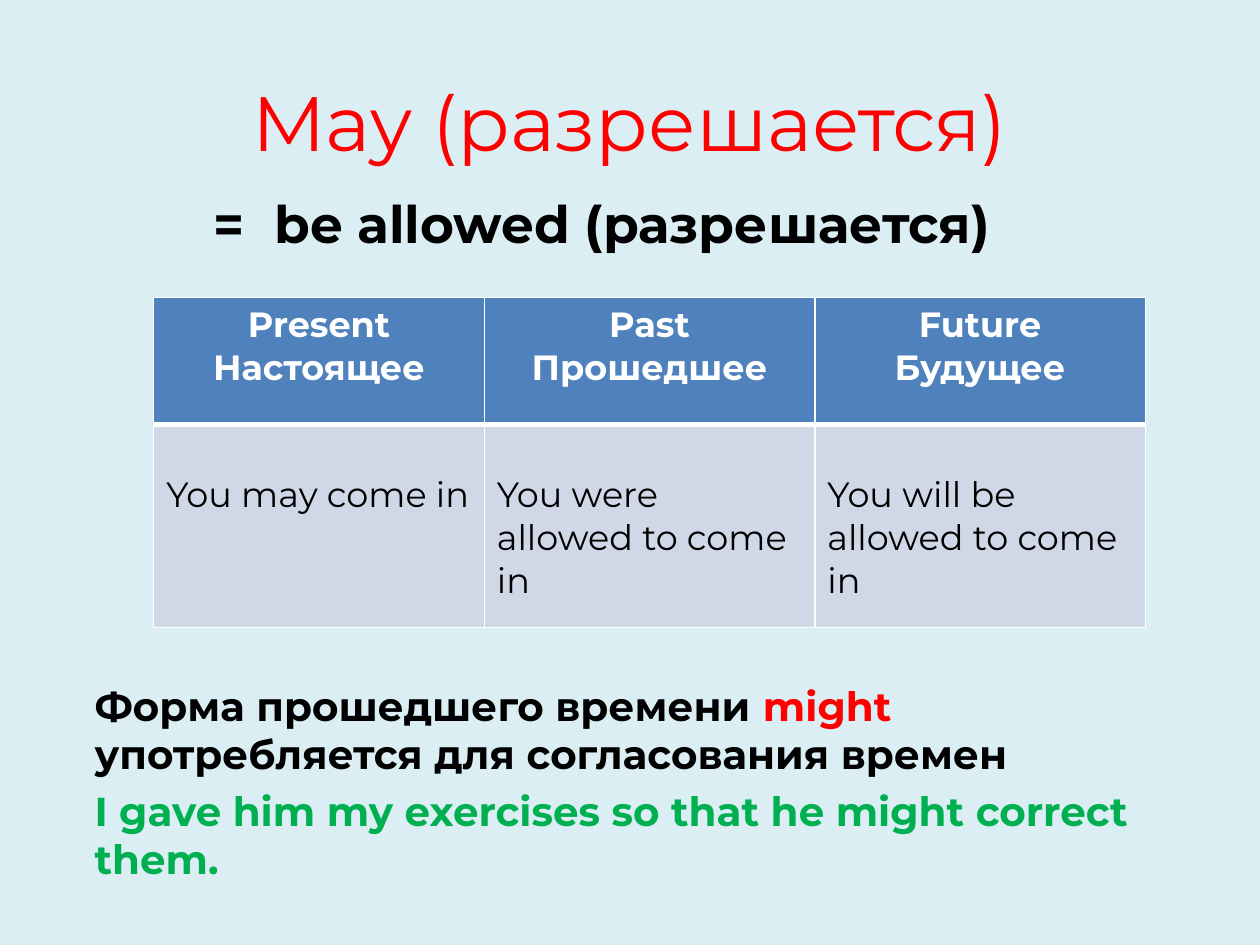
from lxml.etree import SubElement
from pptx import Presentation
from pptx.dml.color import RGBColor
from pptx.enum.text import MSO_ANCHOR, MSO_AUTO_SIZE, PP_ALIGN
from pptx.oxml.ns import qn
from pptx.util import Inches, Pt

# Content
TITLE = "May (разрешается)"
HEADING = [("=  be allowed (разрешается)", "black")]
NOTES = [
    [("Форма прошедшего времени ", "black"), ("might ", "red"),
     ("употребляется для согласования времен", "black")],
    [("I gave him my exercises so that he might correct them.", "green")],
]
TENSES = ["Present\nНастоящее", "Past\nПрошедшее", "Future\nБудущее"]
EXAMPLES = ["You may come in", "You were allowed to come in", "You will be allowed to come in"]

# Style
FONT = "Montserrat"
COLORS = {"background": "DBEEF4", "red": "FF0000", "black": "000000", "green": "00B050",
          "white": "FFFFFF", "header": "4F81BD", "body": "D0D8E8"}
TITLE_BOX = (0.5, 0.3, 9, 1.32)
BODY_BOX = (0.28, 1.47, 9, 5.69)
TABLE_BOX = (1.22, 2.36, 7.87, 2.62)
ROW_HEIGHTS = (1.01, 1.61)
NOTES_INDENT = 0.37
NOTES_GAP = 244  # points left for the table between heading and notes


def color(name):
    return RGBColor.from_string(COLORS[name])


def style(run, size, color_name, bold=False):
    run.font.name, run.font.size, run.font.bold = FONT, Pt(size), bold
    run.font.color.rgb = color(color_name)


def place(shape, box):
    shape.left, shape.top, shape.width, shape.height = map(Inches, box)
    shape.text_frame.auto_size = MSO_AUTO_SIZE.NONE


def write_paragraph(paragraph, parts, size, align, indent=0, before=0):
    paragraph.alignment, paragraph.space_before = align, Pt(before)
    properties = paragraph._p.get_or_add_pPr()
    properties.set("marL", str(Inches(indent)))
    properties.set("indent", "0")
    SubElement(properties, qn("a:buNone"))
    for text, color_name in parts:
        run = paragraph.add_run()
        run.text = text
        style(run, size, color_name, bold=True)


def set_borders(cell, widths):
    properties = cell._tc.get_or_add_tcPr()
    for side, width in zip("LRTB", widths):
        line = SubElement(properties, qn(f"a:ln{side}"), w=str(Pt(width)))
        fill = SubElement(line, qn("a:solidFill"))
        SubElement(fill, qn("a:srgbClr"), val=COLORS["white"])


def fill_row(cells, texts, fill, text_color, align, bold, borders, top):
    for cell, text in zip(cells, texts):
        set_borders(cell, borders)
        cell.fill.solid()
        cell.fill.fore_color.rgb = color(fill)
        cell.margin_top = Inches(top)
        cell.text_frame.text = text
        for paragraph in cell.text_frame.paragraphs:
            paragraph.alignment = align
            for run in paragraph.runs:
                style(run, 20, text_color, bold)


presentation = Presentation()
presentation.slide_width, presentation.slide_height = Inches(10), Inches(7.5)
slide = presentation.slides.add_slide(presentation.slide_layouts[1])
slide.background.fill.solid()
slide.background.fill.fore_color.rgb = color("background")

# Title
title = slide.shapes.title
place(title, TITLE_BOX)
title.text_frame.text = TITLE
title.text_frame.vertical_anchor = MSO_ANCHOR.MIDDLE
title.text_frame.paragraphs[0].alignment = PP_ALIGN.CENTER
style(title.text_frame.paragraphs[0].runs[0], 44, "red")

# Heading above the table and notes below it
body = slide.placeholders[1]
place(body, BODY_BOX)
write_paragraph(body.text_frame.paragraphs[0], HEADING, 29.6, PP_ALIGN.CENTER)
for parts, gap in zip(NOTES, (NOTES_GAP, 4.6)):
    write_paragraph(body.text_frame.add_paragraph(), parts, 23.1, PP_ALIGN.LEFT,
                    NOTES_INDENT, gap)

# Table of tenses
table = slide.shapes.add_table(len(ROW_HEIGHTS), len(TENSES), *map(Inches, TABLE_BOX)).table
for row, height in zip(table.rows, ROW_HEIGHTS):
    row.height = Inches(height)
fill_row(table.rows[0].cells, TENSES, "header", "white", PP_ALIGN.CENTER, True,
         borders=(1, 1, 1, 3), top=0.05)
fill_row(table.rows[1].cells, EXAMPLES, "body", "black", PP_ALIGN.LEFT, False,
         borders=(1, 1, 3, 1), top=0.39)

presentation.save("out.pptx")
